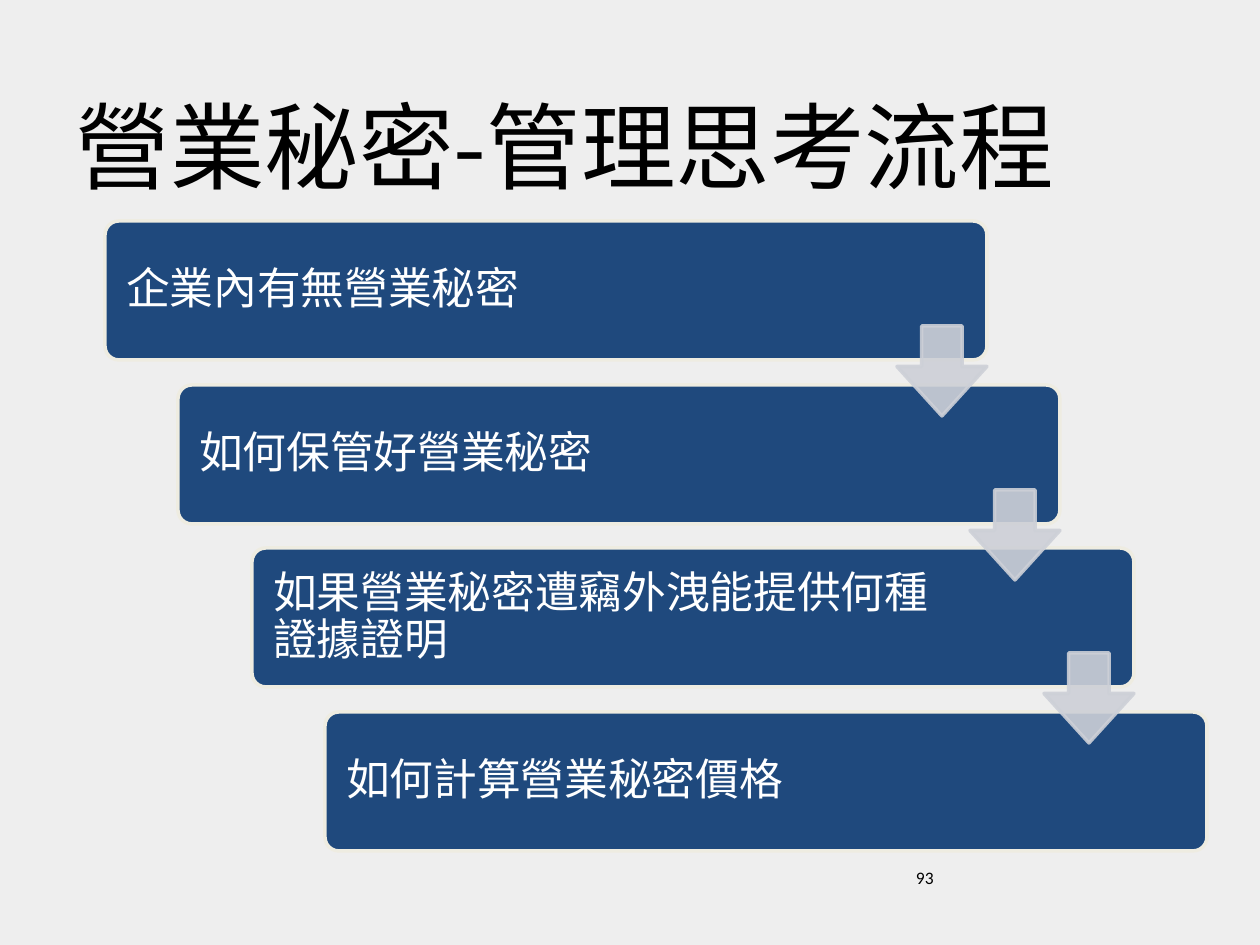
"""Build a staircase process slide on managing trade secrets."""
from lxml import etree
from pptx import Presentation
from pptx.dml.color import RGBColor
from pptx.enum.shapes import MSO_SHAPE
from pptx.enum.text import MSO_ANCHOR, PP_ALIGN
from pptx.oxml.ns import qn
from pptx.util import Emu, Pt

ROUNDED, DOWN_ARROW = MSO_SHAPE.ROUNDED_RECTANGLE, MSO_SHAPE.DOWN_ARROW
TOP, MIDDLE, BOTTOM = MSO_ANCHOR.TOP, MSO_ANCHOR.MIDDLE, MSO_ANCHOR.BOTTOM
LEFT = PP_ALIGN.LEFT

TITLE = "營業秘密-管理思考流程"
STEPS = [
    "企業內有無營業秘密",
    "如何保管好營業秘密",
    "如果營業秘密遭竊外洩能提供何種證據證明",
    "如何計算營業秘密價格",
]
PAGE_NUMBER = "93"

COLORS = {
    "background": "EEEEEE",
    "card": "1F497D",
    "card_line": "EEECE1",
    "arrow": "CDD0D7",
    "card_text": "FFFFFF",
    "text": "000000",
}
BODY_FONT, TITLE_FONT = "Calibri", "Noto Sans CJK SC"

SLIDE_SIZE = (1260, 945)
TITLE_BOX = (63, 49, 1134, 158)
NUMBER_BOX = (903, 861, 294, 66)
CARD_START, CARD_END = (105, 221), (325, 712)
CARD_SIZE = (882, 139)
CARD_INSETS = (17, 13, 171, 13)
ARROW_OFFSET, ARROW_SIZE = (792, 105), 90
ARROW_OPACITY = 90
BOX_INSETS = (13, 6, 13, 6)


def px(value):
    return Emu(round(value * 914400 / 126))


def color(name):
    return RGBColor.from_string(COLORS[name])


def write(shape, text, font_name, size, color_name, anchor, insets=BOX_INSETS):
    frame = shape.text_frame
    frame.word_wrap = True
    frame.vertical_anchor = anchor
    (frame.margin_left, frame.margin_top,
     frame.margin_right, frame.margin_bottom) = map(px, insets)
    paragraph = frame.paragraphs[0]
    paragraph.text = text
    paragraph.alignment = LEFT
    paragraph.font.name = font_name
    paragraph.font.size = Pt(size)
    paragraph.font.color.rgb = color(color_name)
    return paragraph


def add_text(slide, box, *style):
    write(slide.shapes.add_textbox(*map(px, box)), *style)


def add_block(slide, kind, box, adjustments, fill, line):
    shape = slide.shapes.add_shape(kind, *map(px, box))
    shape.shadow.inherit = False
    for index, value in enumerate(adjustments):
        shape.adjustments[index] = value
    shape.fill.solid()
    shape.fill.fore_color.rgb = color(fill)
    shape.line.color.rgb = color(line)
    shape.line.width = Pt(2)
    return shape


def set_opacity(shape, percent):
    for tint in shape.element.spPr.iter(qn("a:srgbClr")):
        etree.SubElement(tint, qn("a:alpha"), val=str(percent * 1000))


def card_position(index):
    share = index / (len(STEPS) - 1)
    return [round(start + (end - start) * share)
            for start, end in zip(CARD_START, CARD_END)]


def add_card(slide, index, text):
    box = (*card_position(index), *CARD_SIZE)
    card = add_block(slide, ROUNDED, box, [0.1], "card", "card_line")
    paragraph = write(card, text, BODY_FONT, 25, "card_text", MIDDLE, CARD_INSETS)
    paragraph.line_spacing = 0.9


def add_arrow(slide, index):
    left, top = (position + offset for position, offset
                 in zip(card_position(index), ARROW_OFFSET))
    box = (left, top, ARROW_SIZE, ARROW_SIZE)
    arrow = add_block(slide, DOWN_ARROW, box, [0.45, 0.55], "arrow", "arrow")
    set_opacity(arrow, ARROW_OPACITY)


def main():
    presentation = Presentation()
    presentation.slide_width, presentation.slide_height = map(px, SLIDE_SIZE)
    slide = presentation.slides.add_slide(presentation.slide_layouts[6])
    slide.background.fill.solid()
    slide.background.fill.fore_color.rgb = color("background")

    for index, text in enumerate(STEPS):
        add_card(slide, index, text)
    for index in range(len(STEPS) - 1):
        add_arrow(slide, index)
    add_text(slide, TITLE_BOX, TITLE, TITLE_FONT, 54, "text", BOTTOM)
    add_text(slide, NUMBER_BOX, PAGE_NUMBER, BODY_FONT, 10, "text", TOP)
    presentation.save("out.pptx")


if __name__ == "__main__":
    main()
